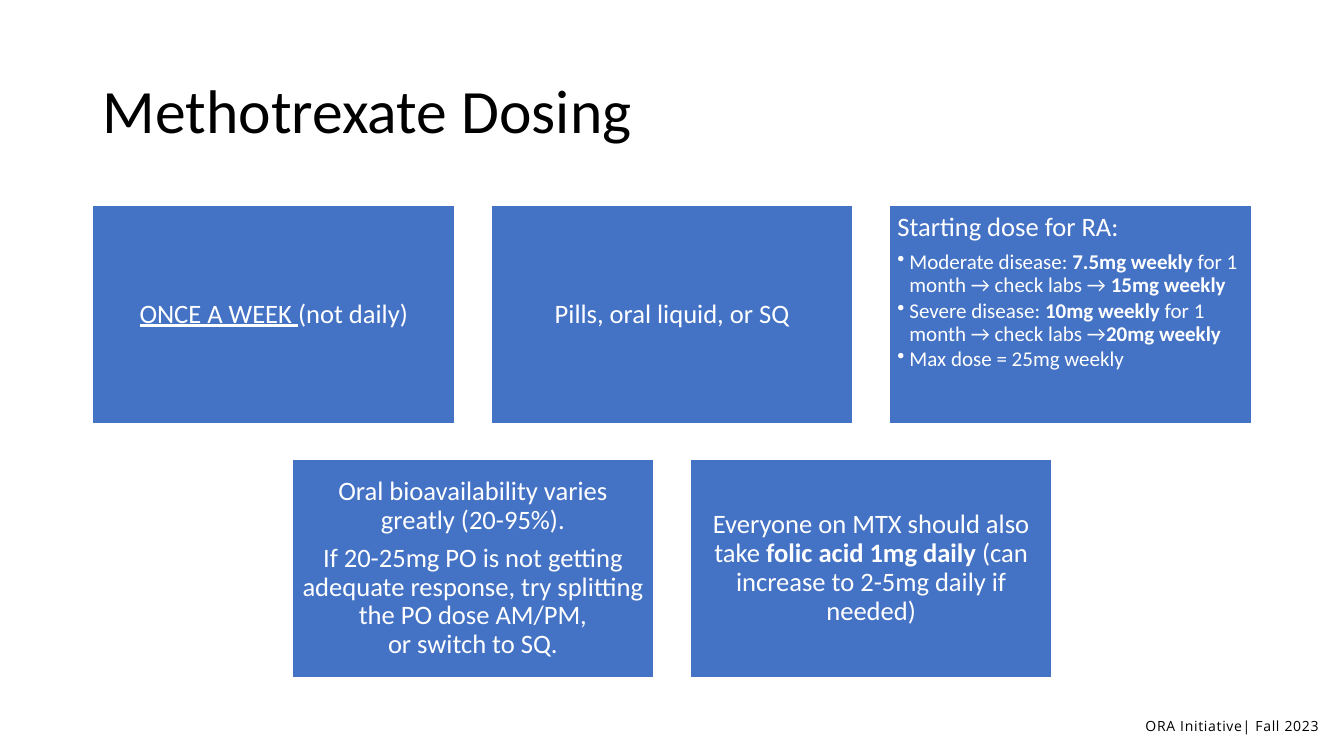
import pptx
import pptx.dml.color
import pptx.enum.shapes
import pptx.enum.text
import pptx.oxml.ns
import pptx.util
from lxml import etree
from pptx.util import Inches

BLUE = pptx.dml.color.RGBColor(0x44, 0x72, 0xC4)
WHITE = pptx.dml.color.RGBColor(0xFF, 0xFF, 0xFF)
BLACK = pptx.dml.color.RGBColor(0x00, 0x00, 0x00)

ALIGN = pptx.enum.text.PP_ALIGN
ANCHOR = pptx.enum.text.MSO_ANCHOR

SLIDE_WIDTH = 13.33
CARD_WIDTH = 3.59
CARD_HEIGHT = 2.16
CARD_GAP = 0.36
CARDS_TOP = 2.04

CARD_ROWS = [
    [
        [[("ONCE A WEEK ", "underline"), ("(not daily)", "")]],
        [[("Pills, oral liquid, or SQ", "")]],
        [
            [("Starting dose for RA:", "")],
            [("Moderate disease: ", ""), ("7.5mg weekly ", "bold"),
             ("for 1 month → check labs → ", ""), ("15mg weekly", "bold")],
            [("Severe disease: ", ""), ("10mg weekly ", "bold"),
             ("for 1 month → check labs →", ""), ("20mg weekly", "bold")],
            [("Max dose = 25mg weekly", "")],
        ],
    ],
    [
        [
            [("Oral bioavailability varies greatly (20-95%).", "")],
            [("If 20-25mg PO is not getting adequate response, try splitting "
              "the PO dose AM/PM,\vor switch to SQ.", "")],
        ],
        [[("Everyone on MTX should also take ", ""), ("folic acid 1mg daily ", "bold"),
          ("(can increase to 2-5mg daily if needed)", "")]],
    ],
]


def write_paragraph(paragraph, runs, size, color=WHITE, font="Calibri",
                    align=ALIGN.LEFT, line_spacing=0.9, space_after=0):
    """Fill a paragraph with (text, style) runs in one common format."""
    paragraph.alignment = align
    paragraph.line_spacing = line_spacing
    paragraph.space_before = pptx.util.Pt(0)
    paragraph.space_after = pptx.util.Pt(space_after)
    for text, style in runs:
        for index, line in enumerate(text.split("\v")):
            if index:
                paragraph.add_line_break()
            run = paragraph.add_run()
            run.text = line
            run.font.name = font
            run.font.size = pptx.util.Pt(size)
            run.font.color.rgb = color
            run.font.bold = style == "bold"
            run.font.underline = style == "underline"


def add_bullet(paragraph, indent=0.12):
    """Give a paragraph a hanging round bullet."""
    properties = paragraph._p.get_or_add_pPr()
    properties.set("marL", str(Inches(indent)))
    properties.set("indent", str(-Inches(indent)))
    bullet = etree.SubElement(properties, pptx.oxml.ns.qn("a:buChar"))
    bullet.set("char", "•")


def set_frame(frame, anchor, inset):
    """Set wrapping, anchor and equal insets of a text frame."""
    frame.word_wrap = True
    frame.vertical_anchor = anchor
    frame.margin_left = frame.margin_right = Inches(inset)
    frame.margin_top = frame.margin_bottom = Inches(inset)


def add_title(slide, text):
    """Place and format the slide title."""
    title = slide.shapes.title
    title.left, title.top = Inches(0.92), Inches(0.4)
    title.width, title.height = Inches(11.5), Inches(1.45)
    title.text_frame.vertical_anchor = ANCHOR.MIDDLE
    write_paragraph(title.text_frame.paragraphs[0], [(text, "")], 44, color=BLACK)


def add_card(slide, left, top, paragraphs):
    """Add a blue card; more than two paragraphs make a heading with bullets."""
    card = slide.shapes.add_shape(
        pptx.enum.shapes.MSO_SHAPE.RECTANGLE,
        Inches(left), Inches(top), Inches(CARD_WIDTH), Inches(CARD_HEIGHT))
    card.shadow.inherit = False
    card.fill.solid()
    card.fill.fore_color.rgb = BLUE
    card.line.color.rgb = WHITE
    card.line.width = pptx.util.Pt(1)
    is_list = len(paragraphs) > 2
    frame = card.text_frame
    set_frame(frame, ANCHOR.TOP if is_list else ANCHOR.MIDDLE, 0.08)
    for index, runs in enumerate(paragraphs):
        paragraph = frame.add_paragraph() if index else frame.paragraphs[0]
        is_bullet = is_list and index > 0
        write_paragraph(paragraph, runs, 15 if is_bullet else 19,
                        align=ALIGN.LEFT if is_list else ALIGN.CENTER,
                        space_after=2.25 if is_bullet else 6.65)
        if is_bullet:
            paragraph.level = 1
            add_bullet(paragraph)


def add_card_rows(slide):
    """Lay the cards out in rows centred on the slide."""
    for row_index, row in enumerate(CARD_ROWS):
        row_width = len(row) * (CARD_WIDTH + CARD_GAP) - CARD_GAP
        row_left = (SLIDE_WIDTH - row_width) / 2
        top = CARDS_TOP + row_index * (CARD_HEIGHT + CARD_GAP)
        for column, paragraphs in enumerate(row):
            add_card(slide, row_left + column * (CARD_WIDTH + CARD_GAP), top, paragraphs)


def add_footer(slide, text):
    """Add the right-aligned footer line."""
    footer = slide.shapes.add_textbox(
        Inches(10.59), Inches(7.12), Inches(2.49), Inches(0.17))
    set_frame(footer.text_frame, ANCHOR.TOP, 0)
    paragraph = footer.text_frame.paragraphs[0]
    write_paragraph(paragraph, [(text, "")], 10, color=BLACK, font="Open Sans",
                    align=ALIGN.RIGHT, line_spacing=pptx.util.Pt(12))
    paragraph.runs[0].font._element.set("spc", "50")


def main():
    """Build and save the slide."""
    presentation = pptx.Presentation()
    presentation.slide_width = Inches(SLIDE_WIDTH)
    presentation.slide_height = Inches(7.5)
    slide = presentation.slides.add_slide(presentation.slide_layouts[5])
    add_title(slide, "Methotrexate Dosing")
    add_card_rows(slide)
    add_footer(slide, "ORA Initiative| Fall 2023")
    presentation.save("out.pptx")


if __name__ == "__main__":
    main()
